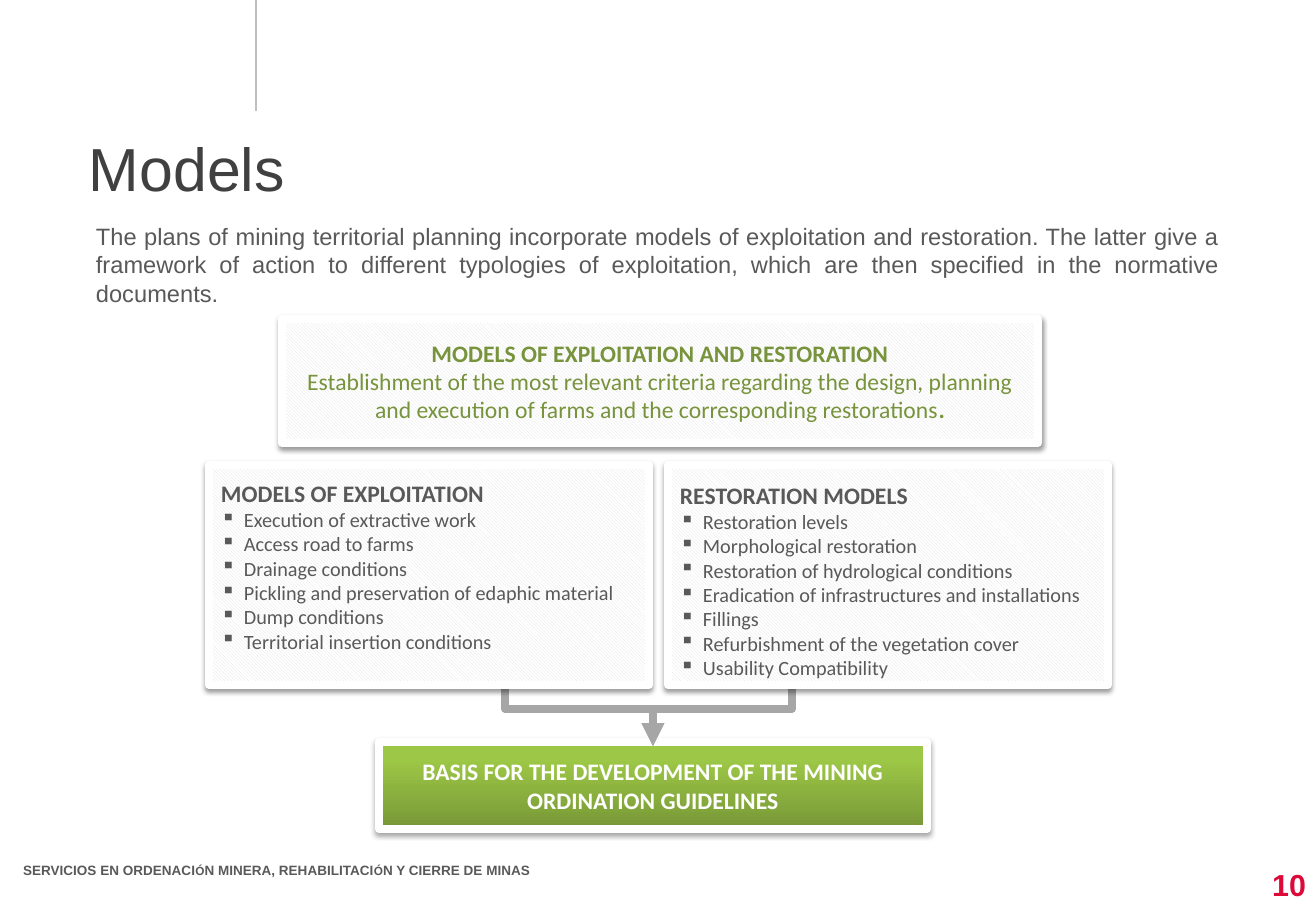
from lxml import etree
from pptx import Presentation, util as u
from pptx.dml.color import RGBColor
from pptx.enum import dml, shapes, text
from pptx.oxml.ns import qn

# Content: a paragraph is a list of runs (words, size, bold)
HEAD = [[("Models", 36, False)]]
INTRO = [[("The plans of mining territorial planning incorporate models of exploitation and "
           "restoration. The latter give a framework of action to different typologies of "
           "exploitation, which are then specified in the normative documents.", 14, False)]]
TOP = [
    [("MODELS OF EXPLOITATION AND RESTORATION", 14, True)],
    [("Establishment of the most relevant criteria regarding the design, planning and "
      "execution of farms and the corresponding restorations", 14, False), (".", 14, True)],
]
BASIS = [[("BASIS FOR THE DEVELOPMENT OF THE MINING ORDINATION GUIDELINES", 14, True)]]
CARDS = [  # heading, top inset in px, points
    ("MODELS OF EXPLOITATION", 14, [
        "Execution of extractive work", "Access road to farms", "Drainage conditions",
        "Pickling and preservation of edaphic material", "Dump conditions",
        "Territorial insertion conditions"]),
    ("RESTORATION MODELS", 16, [
        "Restoration levels", "Morphological restoration",
        "Restoration of hydrological conditions",
        "Eradication of infrastructures and installations", "Fillings",
        "Refurbishment of the vegetation cover", "Usability Compatibility"]),
]
FOOT = [[("SERVICIOS EN ORDENACI", 8, True), ("Ó", 7, True),
         ("N MINERA, REHABILITACI", 8, True), ("Ó", 7, True),
         ("N Y CIERRE DE MINAS", 8, True)]]
PAGE = [[("10", 18, True)]]

INK = {"text": "595959", "title": "404040", "olive": "77933C", "page": "DD0939",
       "white": "FFFFFF", "hatch": "E2E2E2", "arrow": "A6A6A6", "rule": "BFBFBF",
       "dark": "779737", "lime": "9DC746"}
PX = 7526  # EMU in one px
LEFT, MID, RIGHT, JUST = (text.PP_ALIGN.LEFT, text.PP_ALIGN.CENTER,
                          text.PP_ALIGN.RIGHT, text.PP_ALIGN.JUSTIFY)

deck = Presentation()
deck.slide_width, deck.slide_height = 1316 * PX, 911 * PX
slide = deck.slides.add_slide(deck.slide_layouts[6])


def rgb(name):
    return RGBColor.from_string(INK[name])


def write(shape, paras, ink, font, align=LEFT, pad=(12, 6), mid=True):
    frame = shape.text_frame
    frame.word_wrap = True
    frame.margin_left = frame.margin_right = pad[0] * PX
    frame.margin_top = frame.margin_bottom = pad[1] * PX
    frame.vertical_anchor = text.MSO_ANCHOR.MIDDLE if mid else text.MSO_ANCHOR.TOP
    for n, runs in enumerate(paras):
        para = frame.add_paragraph() if n else frame.paragraphs[0]
        para.alignment = align
        for words, size, bold in runs:
            run = para.add_run()
            run.text = words
            run.font.name, run.font.size, run.font.bold = font, u.Pt(size), bold
            run.font.color.rgb = rgb(ink)
    return frame


def label(box, paras, ink, **style):
    shape = slide.shapes.add_textbox(*(v * PX for v in box))
    return write(shape, paras, ink, "Arial", **style)


def panel(box, alpha=38):
    shape = slide.shapes.add_shape(shapes.MSO_SHAPE.ROUNDED_RECTANGLE, *(v * PX for v in box))
    shape.adjustments[0] = 0
    shape.line.color.rgb, shape.line.width = rgb("white"), u.Pt(4.5)
    shape.fill.patterned()
    shape.fill.pattern = dml.MSO_PATTERN.LIGHT_DOWNWARD_DIAGONAL
    shape.fill.fore_color.rgb, shape.fill.back_color.rgb = rgb("hatch"), rgb("white")
    # Soft shadow straight below
    shape.shadow.inherit = False
    glow = etree.SubElement(shape._element.spPr.find(qn("a:effectLst")), qn("a:outerShdw"),
                            blurRad=str(u.Pt(3.1)), dist=str(u.Pt(1.6)),
                            dir="5400000", rotWithShape="0")
    tone = etree.SubElement(glow, qn("a:srgbClr"), val="000000")
    etree.SubElement(tone, qn("a:alpha"), val=str(alpha * 1000))
    return shape


def wire(kind, ends, ink, width):
    line = slide.shapes.add_connector(kind, *(round(v * PX) for v in ends))
    line.line.color.rgb, line.line.width = rgb(ink), u.Pt(width)
    etree.SubElement(line._element.spPr, qn("a:effectLst"))
    return line


# Footer, rule and intro
label((11, 858, 772, 33), FOOT, "text", mid=False).paragraphs[0].line_spacing = 0.9
wire(shapes.MSO_CONNECTOR.STRAIGHT, (256, 0, 256, 111), "rule", 1.5)
label((84, 216, 1148, 98), INTRO, "text", align=JUST, mid=False)

# Top and bottom panels
write(panel((282, 319, 756, 124)), TOP, "olive", "Calibri", MID)
basis = panel((379, 742, 548, 87), 35)
basis.fill.gradient()
basis.fill.gradient_angle = 90
for stop, ink, place in zip(basis.fill.gradient_stops, ("dark", "lime"), (0, 0.8)):
    stop.color.rgb, stop.position = rgb(ink), place
write(basis, BASIS, "white", "Calibri", MID)

# Elbow arrows, turned upright, from both cards to the bottom panel
tip, high, low = 653, 672, 746
for start in (505, 792):
    side = 1 if start < tip else -1
    cx, cy = (start + tip) / 2, (high + low) / 2
    run, rise = (low - high) / 2 * side, abs(tip - start) / 2
    arrow = wire(shapes.MSO_CONNECTOR.ELBOW, (cx + run, cy - rise, cx - run, cy + rise),
                 "arrow", 4.5)
    arrow.rotation = 270 if side > 0 else 90
    etree.SubElement(arrow.line._get_or_add_ln(), qn("a:tailEnd"), type="triangle")

# Cards
for n, (name, inset, points) in enumerate(CARDS):
    paras = [[(name, 14, True)]] + [[(point, 12, False)] for point in points]
    frame = write(panel((209 + n * 459, 465, 440, 220)), paras, "text", "Calibri",
                  pad=(12, inset), mid=False)
    frame.margin_bottom = 0
    for para in frame.paragraphs[1:]:
        props = para._p.get_or_add_pPr()
        props.set("marL", str(23 * PX))
        props.set("indent", str(-23 * PX))
        etree.SubElement(props, qn("a:buChar"), char="▪")

# Page number and title
label((1213, 860, 105, 48), PAGE, "page", align=RIGHT)
label((89, 121, 1148, 93), HEAD, "title", pad=(0, 0))

deck.save("out.pptx")
